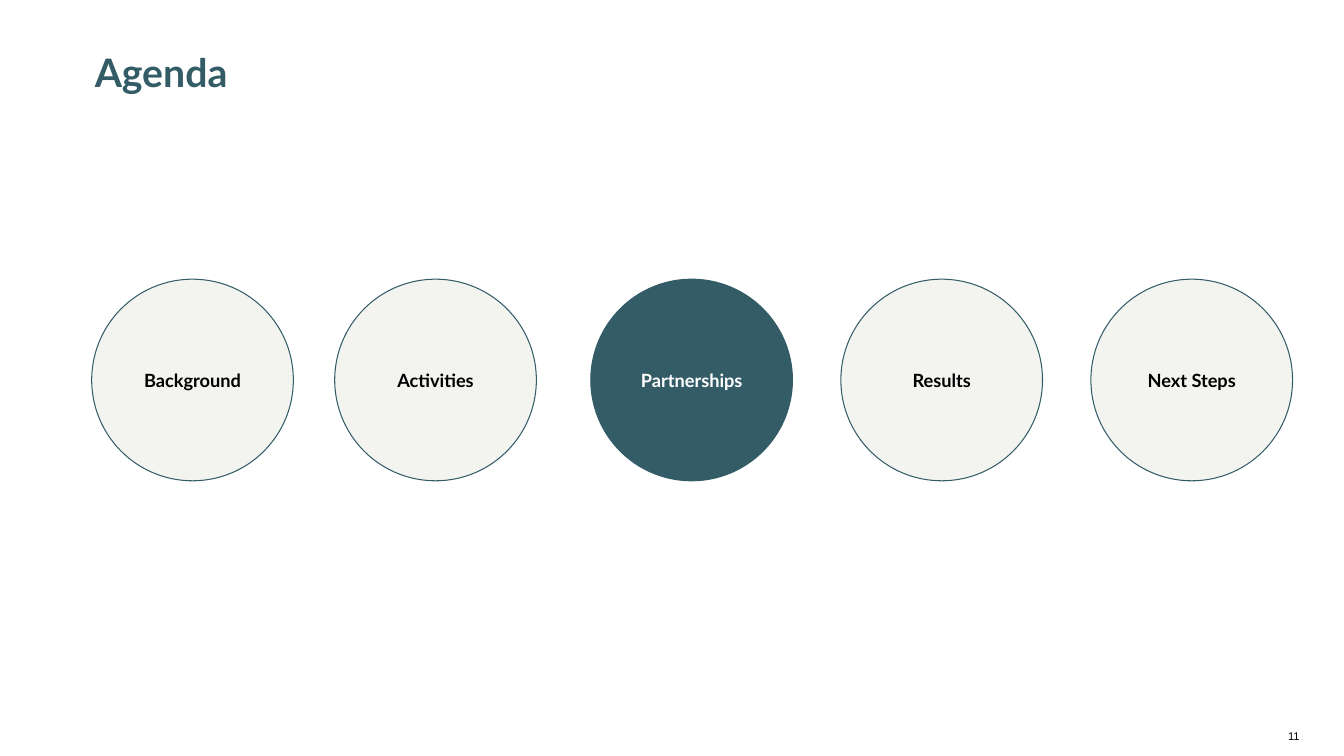
from pptx import Presentation
from pptx.dml.color import RGBColor
from pptx.enum.shapes import MSO_SHAPE
from pptx.enum.text import MSO_ANCHOR, MSO_AUTO_SIZE, PP_ALIGN
from pptx.util import Inches, Pt

COLORS = {"teal": "335C67", "stone": "F3F4F0", "black": "000000", "white": "FFFFFF"}
TITLE_FONT = {"name": "Lato", "size": Pt(28), "bold": True}
TOPIC_FONT = {"name": "Lato", "size": Pt(13), "bold": True}
NUMBER_FONT = {"name": "Arial", "size": Pt(8), "bold": False}

# Topic and its distance from the left edge of the row
TOPICS = [
    ("Background", 0),
    ("Activities", 2.41),
    ("Partnerships", 4.95),
    ("Results", 7.43),
    ("Next Steps", 9.91),
]
CURRENT_TOPIC = "Partnerships"


def color(name):
    return RGBColor.from_string(COLORS[name])


def write_text(shape, text, font_format, color_name, alignment, anchor, margins):
    frame = shape.text_frame
    frame_format = {
        "word_wrap": True,
        "auto_size": MSO_AUTO_SIZE.NONE,
        "vertical_anchor": anchor,
        "margin_left": Inches(margins[0]),
        "margin_right": Inches(margins[0]),
        "margin_top": Inches(margins[1]),
        "margin_bottom": Inches(margins[1]),
    }
    for name, value in frame_format.items():
        setattr(frame, name, value)
    paragraph = frame.paragraphs[0]
    paragraph.alignment = alignment
    run = paragraph.add_run()
    run.text = text
    for name, value in font_format.items():
        setattr(run.font, name, value)
    run.font.color.rgb = color(color_name)
    return paragraph


def add_title(slide, left, top, width, height):
    title = slide.shapes.title
    box = {"left": left, "top": top, "width": width, "height": height}
    for name, value in box.items():
        setattr(title, name, Inches(value))
    paragraph = write_text(title, "Agenda", TITLE_FONT, "teal",
                           PP_ALIGN.LEFT, MSO_ANCHOR.BOTTOM, (0.1, 0.05))
    paragraph.line_spacing = 0.9


def add_topic_row(slide, left, top, diameter):
    for topic, offset in TOPICS:
        is_current = topic == CURRENT_TOPIC
        circle = slide.shapes.add_shape(
            MSO_SHAPE.OVAL, Inches(left + offset), Inches(top),
            Inches(diameter), Inches(diameter))
        circle.shadow.inherit = False
        circle.fill.solid()
        circle.fill.fore_color.rgb = color("teal" if is_current else "stone")
        circle.line.color.rgb = color("teal")
        circle.line.width = Pt(0.75)
        write_text(circle, topic, TOPIC_FONT, "white" if is_current else "black",
                   PP_ALIGN.CENTER, MSO_ANCHOR.MIDDLE, (0.1, 0.1))


def add_page_number(slide, left, top, width, height):
    box = slide.shapes.add_textbox(*map(Inches, (left, top, width, height)))
    write_text(box, "11", NUMBER_FONT, "black",
               PP_ALIGN.RIGHT, MSO_ANCHOR.TOP, (0.1, 0))


def main():
    presentation = Presentation()
    presentation.slide_width = Inches(13.33)
    presentation.slide_height = Inches(7.5)
    title_only = presentation.slide_layouts[5]
    slide = presentation.slides.add_slide(title_only)
    slide.background.fill.solid()
    slide.background.fill.fore_color.rgb = color("white")

    add_title(slide, 0.84, 0.51, 10.03, 0.49)
    add_topic_row(slide, 0.91, 2.77, 2)
    add_page_number(slide, 11.13, 7.24, 1.86, 0.18)
    presentation.save("out.pptx")


if __name__ == "__main__":
    main()
